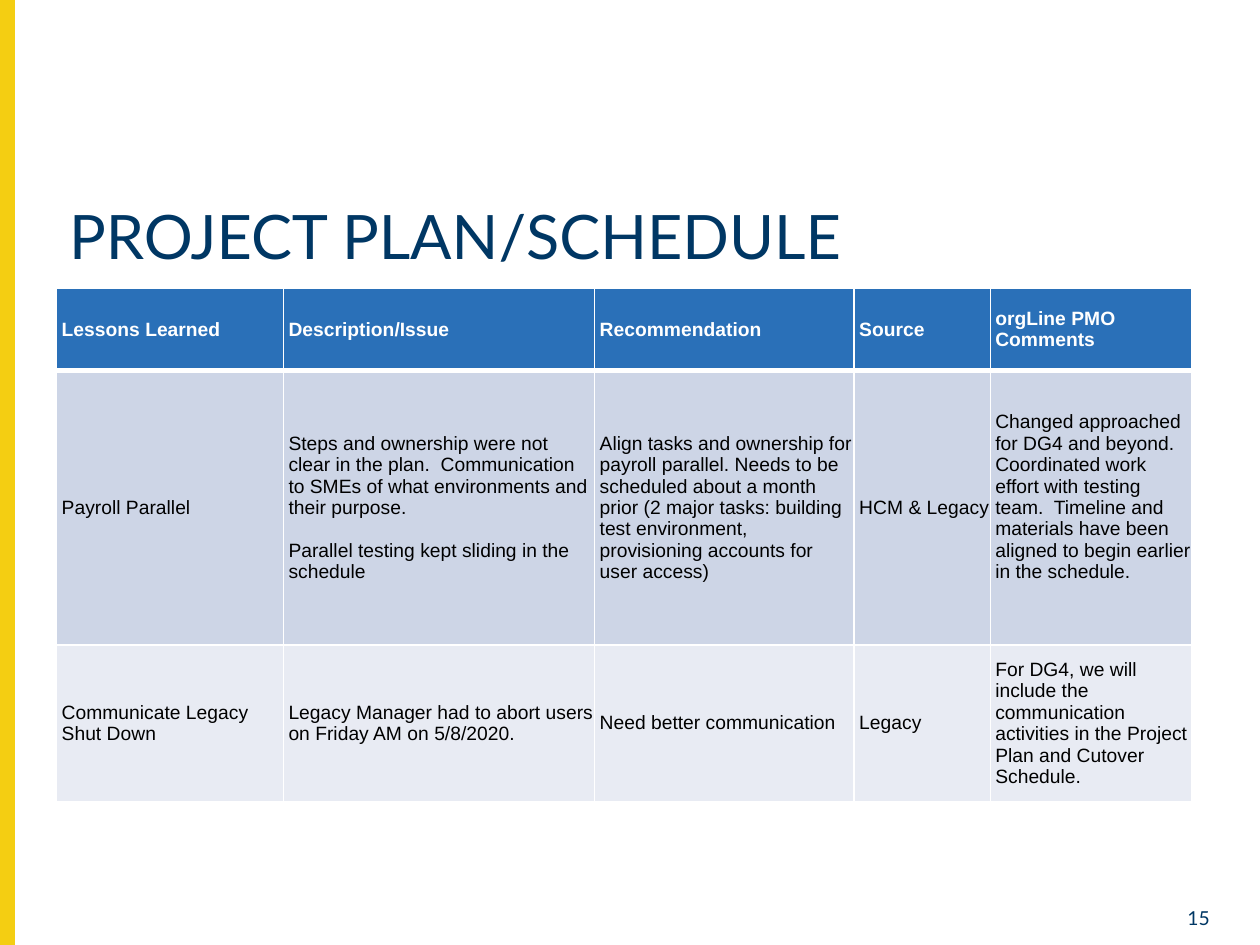
from dataclasses import dataclass

from lxml.etree import SubElement
from pptx import Presentation
from pptx.dml.color import RGBColor
from pptx.enum.shapes import MSO_SHAPE
from pptx.enum.text import MSO_ANCHOR, PP_ALIGN
from pptx.oxml.ns import qn
from pptx.util import Inches, Pt

GOLD = RGBColor(0xF4, 0xCE, 0x12)
NAVY = RGBColor(0x00, 0x37, 0x64)
BLUE = RGBColor(0x2A, 0x70, 0xB8)
MIST = RGBColor(0xCD, 0xD5, 0xE6)
PALE = RGBColor(0xE8, 0xEB, 0xF3)
WHITE = RGBColor(0xFF, 0xFF, 0xFF)
BLACK = RGBColor(0x00, 0x00, 0x00)

WIDE, HIGH = 10, 7.5
LEFT = 0.45
COLS = (1.8, 2.47, 2.06, 1.08, 1.6)


@dataclass(frozen=True)
class Label:
    text: str
    box: tuple[float, float, float, float]
    size: float
    align: PP_ALIGN
    space: float = 1.0


@dataclass(frozen=True)
class Band:
    high: float
    fill: RGBColor
    ink: RGBColor
    bold: bool
    edge: float  # bottom border width, points
    lift: float  # bottom margin of the comments cell, inches
    cells: tuple[str, ...]  # a line break starts a new paragraph


LABELS = (
    Label("PROJECT PLAN/SCHEDULE", (LEFT, 1.59, 9.08, 0.56), 35,
          PP_ALIGN.LEFT, 0.9),
    Label("15", (9.2, 7.14, 0.5, 0.21), 11, PP_ALIGN.RIGHT),
)

BANDS = (
    Band(0.65, BLUE, WHITE, True, 3, 0, (
        "Lessons Learned", "Description/Issue", "Recommendation", "Source",
        "orgLine PMO Comments")),
    Band(2.18, MIST, BLACK, False, 1, 0.17, (
        "Payroll Parallel",
        "Steps and ownership were not clear in the plan.  Communication to "
        "SMEs of what environments and their purpose.\n"
        "Parallel testing kept sliding in the schedule",
        "Align tasks and ownership for payroll parallel. Needs to be scheduled "
        "about a month prior (2 major tasks: building test environment, "
        "provisioning accounts for user access)",
        "HCM & Legacy",
        "Changed approached for DG4 and beyond.  Coordinated work effort with "
        "testing team.  Timeline and materials have been aligned to begin "
        "earlier in the schedule.")),
    Band(1.24, PALE, BLACK, False, 1, 0, (
        "Communicate Legacy Shut Down",
        "Legacy Manager had to abort users on Friday AM on 5/8/2020.",
        "Need better communication",
        "Legacy",
        "For DG4, we will include the communication activities in the Project "
        "Plan and Cutover Schedule.")),
)


def add_run(para, text: str, face: str, size: float, ink: RGBColor,
            bold: bool = False) -> None:
    run = para.add_run()
    run.text = text
    run.font.name = face
    run.font.size = Pt(size)
    run.font.bold = bold
    run.font.color.rgb = ink


def add_bar(slide) -> None:
    bar = slide.shapes.add_shape(MSO_SHAPE.RECTANGLE, 0, 0,
                                 Inches(0.11), Inches(HIGH))
    bar.shadow.inherit = False
    bar.fill.solid()
    bar.fill.fore_color.rgb = GOLD
    bar.line.color.rgb = GOLD
    bar.line.width = Pt(1)


def add_label(slide, label: Label) -> None:
    frame = slide.shapes.add_textbox(*map(Inches, label.box)).text_frame
    frame.word_wrap = True
    frame.margin_top = Inches(0.05)
    frame.margin_bottom = 0
    para = frame.paragraphs[0]
    para.alignment = label.align
    para.line_spacing = label.space
    add_run(para, label.text, "Lato", label.size, NAVY)


def add_edge(cell, side: str, width: float) -> None:
    line = SubElement(cell._tc.get_or_add_tcPr(), qn(f"a:{side}"),
                      w=str(Pt(width)))
    fill = SubElement(line, qn("a:solidFill"))
    SubElement(fill, qn("a:srgbClr"), val=str(WHITE))


def fill_cell(cell, text: str, band: Band, top: float, lift: float) -> None:
    cell.vertical_anchor = MSO_ANCHOR.MIDDLE
    cell.margin_left = Inches(0.04)
    cell.margin_right = cell.margin_top = 0
    cell.margin_bottom = Inches(lift)
    # Borders must precede the fill in the cell properties
    for side, width in (("lnL", 1), ("lnR", 1), ("lnT", top),
                        ("lnB", band.edge)):
        add_edge(cell, side, width)
    cell.fill.solid()
    cell.fill.fore_color.rgb = band.fill
    frame = cell.text_frame
    for i, part in enumerate(text.split("\n")):
        para = frame.add_paragraph() if i else frame.paragraphs[0]
        if i:
            para.space_before = Pt(12)
        add_run(para, part, "Arial", 11, band.ink, band.bold)


def add_grid(slide) -> None:
    high = sum(band.high for band in BANDS)
    grid = slide.shapes.add_table(
        len(BANDS), len(COLS), Inches(LEFT), Inches(2.29),
        Inches(sum(COLS)), Inches(high)).table
    for col, wide in zip(grid.columns, COLS):
        col.width = Inches(wide)
    top, last = 1, len(COLS) - 1
    for r, band in enumerate(BANDS):
        grid.rows[r].height = Inches(band.high)
        for c, text in enumerate(band.cells):
            lift = band.lift if c == last else 0
            fill_cell(grid.cell(r, c), text, band, top, lift)
        top = band.edge


def main() -> None:
    deck = Presentation()
    deck.slide_width, deck.slide_height = Inches(WIDE), Inches(HIGH)
    slide = deck.slides.add_slide(deck.slide_layouts[6])
    # Side bar, title and page number, then the lessons table
    add_bar(slide)
    for label in LABELS:
        add_label(slide, label)
    add_grid(slide)
    deck.save("out.pptx")


if __name__ == "__main__":
    main()
